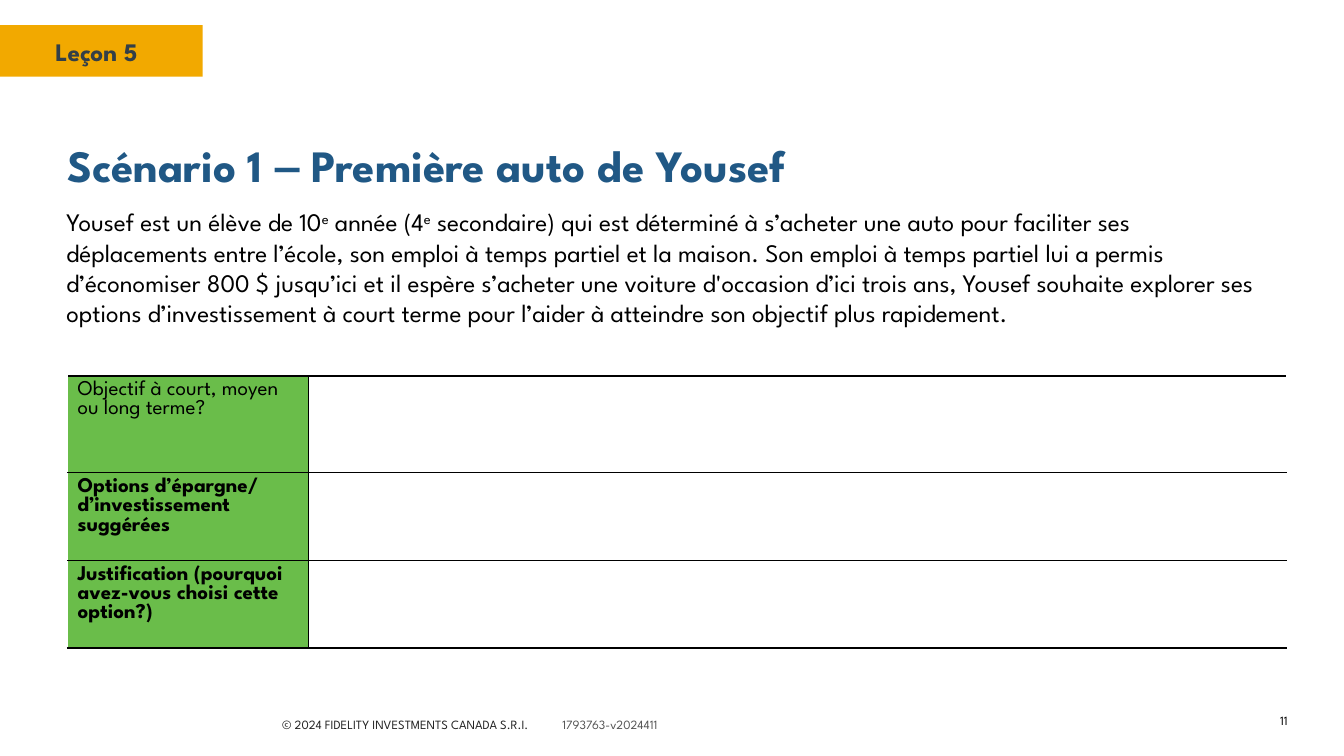
from lxml import etree
from pptx import Presentation
from pptx.dml.color import RGBColor
from pptx.enum.shapes import MSO_SHAPE
from pptx.enum.text import MSO_ANCHOR, PP_ALIGN
from pptx.oxml.ns import qn
from pptx.util import Inches, Pt

RECT = MSO_SHAPE.RECTANGLE
TOP, MIDDLE = MSO_ANCHOR.TOP, MSO_ANCHOR.MIDDLE
LEFT, RIGHT = PP_ALIGN.LEFT, PP_ALIGN.RIGHT

BLACK = RGBColor(0x00, 0x00, 0x00)
WHITE = RGBColor(0xFF, 0xFF, 0xFF)
AMBER = RGBColor(0xF2, 0xA9, 0x00)
SLATE = RGBColor(0x33, 0x3F, 0x48)
BLUE = RGBColor(0x20, 0x58, 0x85)
GREEN = RGBColor(0x6A, 0xBD, 0x4A)
INK = RGBColor(0x22, 0x22, 0x22)
GREY = RGBColor(0x54, 0x54, 0x54)


class SlideBuilder:
    font = "League Spartan"
    leading = 1.2

    def __init__(self, prs):
        self.slide = prs.slides.add_slide(prs.slide_layouts[5])

    def style(self, p, size, color, bold=False, align=LEFT, leading=None):
        p.alignment = align
        p.line_spacing = Pt(size * (leading or self.leading))
        p.font.name, p.font.size, p.font.bold = self.font, Pt(size), bold
        p.font.color.rgb = color

    def title(self, box, parts, size, color):
        sp = self.slide.shapes.title
        sp.left, sp.top, sp.width, sp.height = map(Inches, box)
        tf = sp.text_frame
        tf.vertical_anchor = MIDDLE
        p = tf.paragraphs[0]
        p.alignment = LEFT
        p.font.size, p.font.bold = Pt(size), True
        p.font.color.rgb = color
        for text, font in parts:
            r = p.add_run()
            r.text = text
            r.font.name = font

    def band(self, box, color):
        sp = self.slide.shapes.add_shape(RECT, *map(Inches, box))
        sp.shadow.inherit = False
        sp.fill.solid()
        sp.fill.fore_color.rgb = color
        sp.line.fill.background()

    def text(self, box, parts, size, color, bold=False, align=LEFT,
             anchor=TOP, tab=None):
        """Add one paragraph; parts are its runs. Returns the runs."""
        tf = self.slide.shapes.add_textbox(*map(Inches, box)).text_frame
        tf.word_wrap = True
        tf.vertical_anchor = anchor
        p = tf.paragraphs[0]
        if tab:
            tabs = etree.SubElement(p._p.get_or_add_pPr(), qn("a:tabLst"))
            etree.SubElement(tabs, qn("a:tab"), pos=str(Inches(tab)), algn="l")
        self.style(p, size, color, bold, align)
        for part in parts:
            p.add_run().text = part
        return p.runs

    def borders(self, cell, **colors):
        tcPr = cell._tc.get_or_add_tcPr()
        for side in "LRTB":
            ln = etree.SubElement(tcPr, qn("a:ln" + side), w=str(Pt(1)))
            fill = etree.SubElement(ln, qn("a:solidFill"))
            etree.SubElement(fill, qn("a:srgbClr"),
                             val=str(colors.get(side, BLACK)))

    def table(self, box, col_widths, row_heights, labels, size):
        table = self.slide.shapes.add_table(
            len(row_heights), len(col_widths), *map(Inches, box)).table
        table.first_row = table.horz_banding = False
        for col, width in zip(table.columns, col_widths):
            col.width = Inches(width)
        for i, (row, height) in enumerate(zip(table.rows, row_heights)):
            row.height = Inches(height)
            label, answer = row.cells
            self.borders(label, L=WHITE)
            self.borders(answer, R=WHITE)
            label.fill.solid()
            label.fill.fore_color.rgb = GREEN
            answer.fill.background()
            label.text = labels[i]
            for p in label.text_frame.paragraphs:
                self.style(p, size, BLACK, bold=i > 0, leading=0.92)


def main():
    prs = Presentation()
    prs.slide_width, prs.slide_height = Inches(13.33), Inches(7.5)
    s = SlideBuilder(prs)

    # Lesson tag
    s.band((0, 0.25, 2.01, 0.51), AMBER)
    s.text((0.45, 0.31, 1.31, 0.4), ["Leçon 5"], 18, SLATE, bold=True)

    # Title and scenario
    s.title((0.57, 1.27, 12.2, 0.73),
            [("Scénario 1 ", s.font), ("‒", "Arial"),
             (" Première auto de Yousef", s.font)], 32, BLUE)
    runs = s.text((0.56, 2, 12.2, 1.62), [
        "Yousef est un élève de 10", "e", " année (4", "e",
        " secondaire) qui est déterminé à s’acheter une auto pour faciliter "
        "ses déplacements entre l’école, son emploi à temps partiel et la "
        "maison. Son emploi à temps partiel lui a permis d’économiser 800 $ "
        "jusqu’ici et il espère s’acheter une voiture d'occasion d’ici "
        "trois ans, Yousef souhaite explorer ses options d’investissement à "
        "court terme pour l’aider à atteindre son objectif plus rapidement.",
    ], 18, BLACK)
    for r in runs[1::2]:
        r.font._element.set("baseline", "30000")

    # Answer table
    s.table((0.67, 3.73, 12.09, 2.7), (2.39, 9.7), (0.96, 0.87, 0.87), [
        "Objectif à court, moyen ou long terme?",
        "Options d’épargne/\nd’investissement suggérées",
        "Justification (pourquoi avez-vous choisi cette option?)",
    ], 15)

    # Footer
    runs = s.text((2.7, 7.06, 4.33, 0.25),
                  ["© 2024 FIDELITY INVESTMENTS CANADA S.R.I.",
                   "\t1793763-v2024411"], 9, INK, tab=2.78)
    runs[1].font.color.rgb = GREY
    s.text((12.17, 7.06, 0.7, 0.18), ["11"], 9, BLACK, align=RIGHT,
           anchor=MIDDLE)

    prs.save("out.pptx")


if __name__ == "__main__":
    main()
